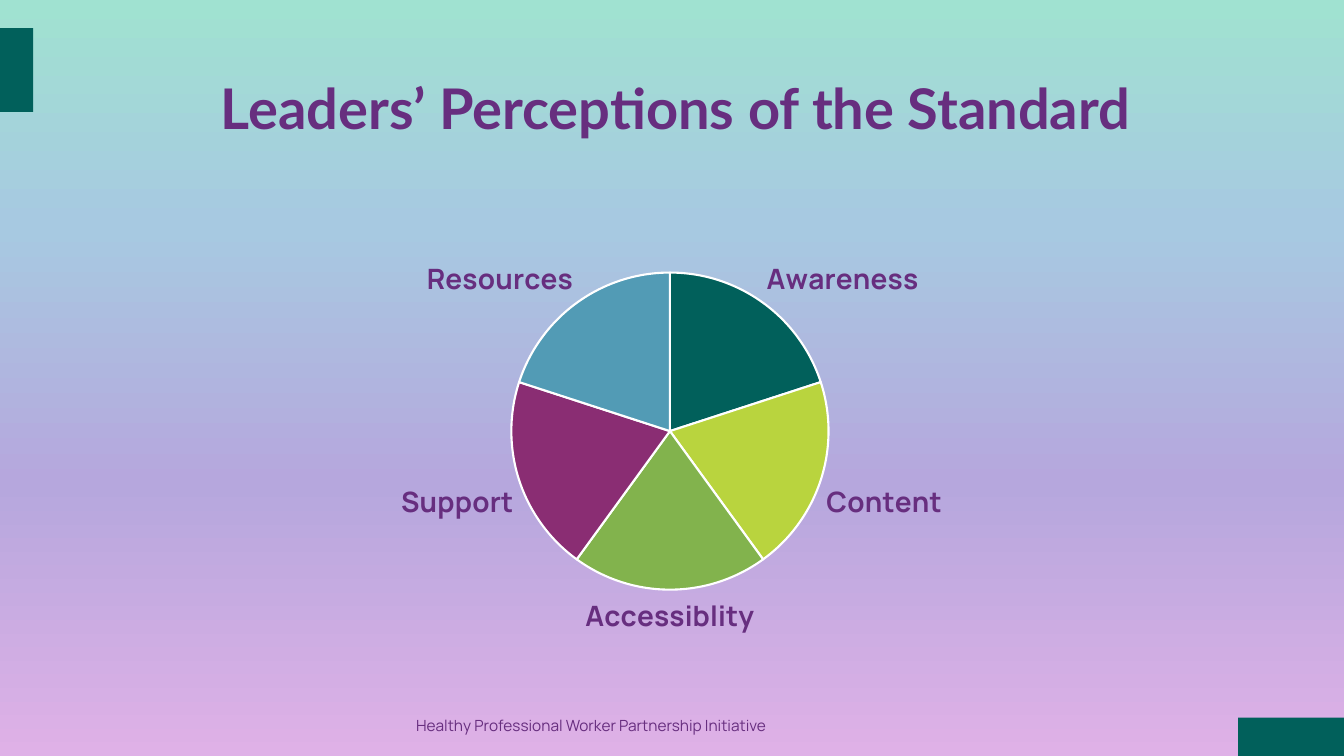
from dataclasses import dataclass

from lxml import etree
from pptx import Presentation
from pptx.chart.data import CategoryChartData
from pptx.dml.color import RGBColor
from pptx.enum.chart import XL_CHART_TYPE, XL_LABEL_POSITION
from pptx.enum.shapes import MSO_SHAPE
from pptx.enum.text import MSO_ANCHOR, PP_ALIGN
from pptx.oxml import parse_xml
from pptx.oxml.ns import nsdecls, qn
from pptx.slide import Slide
from pptx.util import Inches, Pt

PIE = XL_CHART_TYPE.PIE
OUTSIDE_END = XL_LABEL_POSITION.OUTSIDE_END
RECTANGLE = MSO_SHAPE.RECTANGLE
TOP, MIDDLE = MSO_ANCHOR.TOP, MSO_ANCHOR.MIDDLE
LEFT, CENTER = PP_ALIGN.LEFT, PP_ALIGN.CENTER

TEAL = RGBColor(0x01, 0x60, 0x5B)
LIME = RGBColor(0xB9, 0xD4, 0x3E)
GREEN = RGBColor(0x82, 0xB3, 0x4D)
PLUM = RGBColor(0x8A, 0x2D, 0x73)
BLUE = RGBColor(0x52, 0x9B, 0xB5)
PURPLE = RGBColor(0x67, 0x2E, 0x7F)
WHITE = RGBColor(0xFF, 0xFF, 0xFF)
PINK = RGBColor(0xDF, 0xB1, 0xE7)
LAVENDER = RGBColor(0xB6, 0xA7, 0xDD)
SKY = RGBColor(0xA7, 0xC9, 0xE1)
MINT = RGBColor(0xA0, 0xE2, 0xD1)

TITLE_FONT = "Lato"
BODY_FONT = "Manrope"


@dataclass(frozen=True)
class Area:
    left: float
    top: float
    width: float
    height: float

    def lengths(self) -> tuple[Inches, Inches, Inches, Inches]:
        return (Inches(self.left), Inches(self.top),
                Inches(self.width), Inches(self.height))


@dataclass(frozen=True)
class Slice:
    label: str
    color: RGBColor
    share: int = 20


@dataclass(frozen=True)
class GradientStop:
    percent: int
    color: RGBColor


CORNER_BLOCKS = (Area(12.28, 7.12, 1.05, 0.38), Area(0, 0.28, 0.33, 0.83))
SLICES = (
    Slice("Awareness", TEAL),
    Slice("Content", LIME),
    Slice("Accessiblity", GREEN),
    Slice("Support", PLUM),
    Slice("Resources", BLUE),
)
BACKGROUND = (
    GradientStop(0, PINK),
    GradientStop(36, LAVENDER),
    GradientStop(70, SKY),
    GradientStop(100, MINT),
)
PLOT = Area(0.35, 0.1, 0.29, 0.76)


def paint_background(page: Slide, stops: tuple[GradientStop, ...]) -> None:
    stop_xml = "".join(
        f'<a:gs pos="{stop.percent * 1000}"><a:srgbClr val="{stop.color}"/></a:gs>'
        for stop in stops
    )
    page.background.fill.solid()
    properties = page.element.find(f".//{qn('p:bgPr')}")
    properties.replace(properties[0], parse_xml(
        f'<a:gradFill {nsdecls("a")} rotWithShape="1"><a:gsLst>{stop_xml}</a:gsLst>'
        '<a:lin ang="16200000" scaled="0"/></a:gradFill>'
    ))


def add_block(page: Slide, area: Area) -> None:
    block = page.shapes.add_shape(RECTANGLE, *area.lengths())
    block.shadow.inherit = False
    block.fill.solid()
    block.fill.fore_color.rgb = TEAL
    block.line.fill.background()


def add_text(page: Slide, area: Area, text: str, *, font: str, size: float,
             bold: bool = False, align: PP_ALIGN = LEFT,
             anchor: MSO_ANCHOR = TOP, line_spacing: float = 1.0) -> None:
    box = page.shapes.add_textbox(*area.lengths())
    frame = box.text_frame
    frame.word_wrap = True
    frame.vertical_anchor = anchor
    para = frame.paragraphs[0]
    para.alignment = align
    para.line_spacing = line_spacing
    span = para.add_run()
    span.text = text
    span.font.name = font
    span.font.size = Pt(size)
    span.font.bold = bold
    span.font.color.rgb = PURPLE


def place_plot(plot_area: etree._Element, area: Area) -> None:
    for old_layout in plot_area.findall(qn("c:layout")):
        plot_area.remove(old_layout)
    layout = etree.Element(qn("c:layout"))
    manual = etree.SubElement(layout, qn("c:manualLayout"))
    settings = {
        "layoutTarget": "inner", "xMode": "edge", "yMode": "edge",
        "x": area.left, "y": area.top, "w": area.width, "h": area.height,
    }
    for name, value in settings.items():
        etree.SubElement(manual, qn(f"c:{name}")).set("val", str(value))
    plot_area.insert(0, layout)


def add_pie(page: Slide, area: Area, slices: tuple[Slice, ...]) -> None:
    data = CategoryChartData()
    data.categories = [piece.label for piece in slices]
    data.add_series("Series 1", [piece.share for piece in slices])
    chart = page.shapes.add_chart(PIE, *area.lengths(), data).chart
    chart.has_title = False
    chart.has_legend = False
    chart.font.name = BODY_FONT
    chart.font.size = Pt(10)
    chart.font.color.rgb = PURPLE

    plot = chart.plots[0]
    plot.vary_by_categories = True
    for index, piece in enumerate(slices):
        point_format = plot.series[0].points[index].format
        point_format.fill.solid()
        point_format.fill.fore_color.rgb = piece.color
        point_format.line.color.rgb = WHITE
        point_format.line.width = Pt(1.5)

    labels = plot.series[0].data_labels
    labels.show_category_name = True
    labels.show_value = False
    labels.show_percentage = False
    labels.position = OUTSIDE_END
    labels.font.name = BODY_FONT
    labels.font.size = Pt(20)
    labels.font.bold = True
    labels.font.color.rgb = PURPLE
    place_plot(chart.element.find(f".//{qn('c:plotArea')}"), PLOT)


def main() -> None:
    deck = Presentation()
    deck.slide_width = Inches(13.33)
    deck.slide_height = Inches(7.5)
    page = deck.slides.add_slide(deck.slide_layouts[6])
    paint_background(page, BACKGROUND)
    for area in CORNER_BLOCKS:
        add_block(page, area)
    add_text(page, Area(1.2, 0.31, 11, 1.59), "Leaders’ Perceptions of the Standard",
             font=TITLE_FONT, size=40, bold=True, align=CENTER, anchor=MIDDLE,
             line_spacing=0.9)
    add_text(page, Area(4.03, 7.06, 5.27, 0.4),
             "Healthy Professional Worker Partnership Initiative",
             font=BODY_FONT, size=11)
    add_pie(page, Area(1.2, 2.29, 11, 4.14), SLICES)
    deck.save("out.pptx")


if __name__ == "__main__":
    main()
